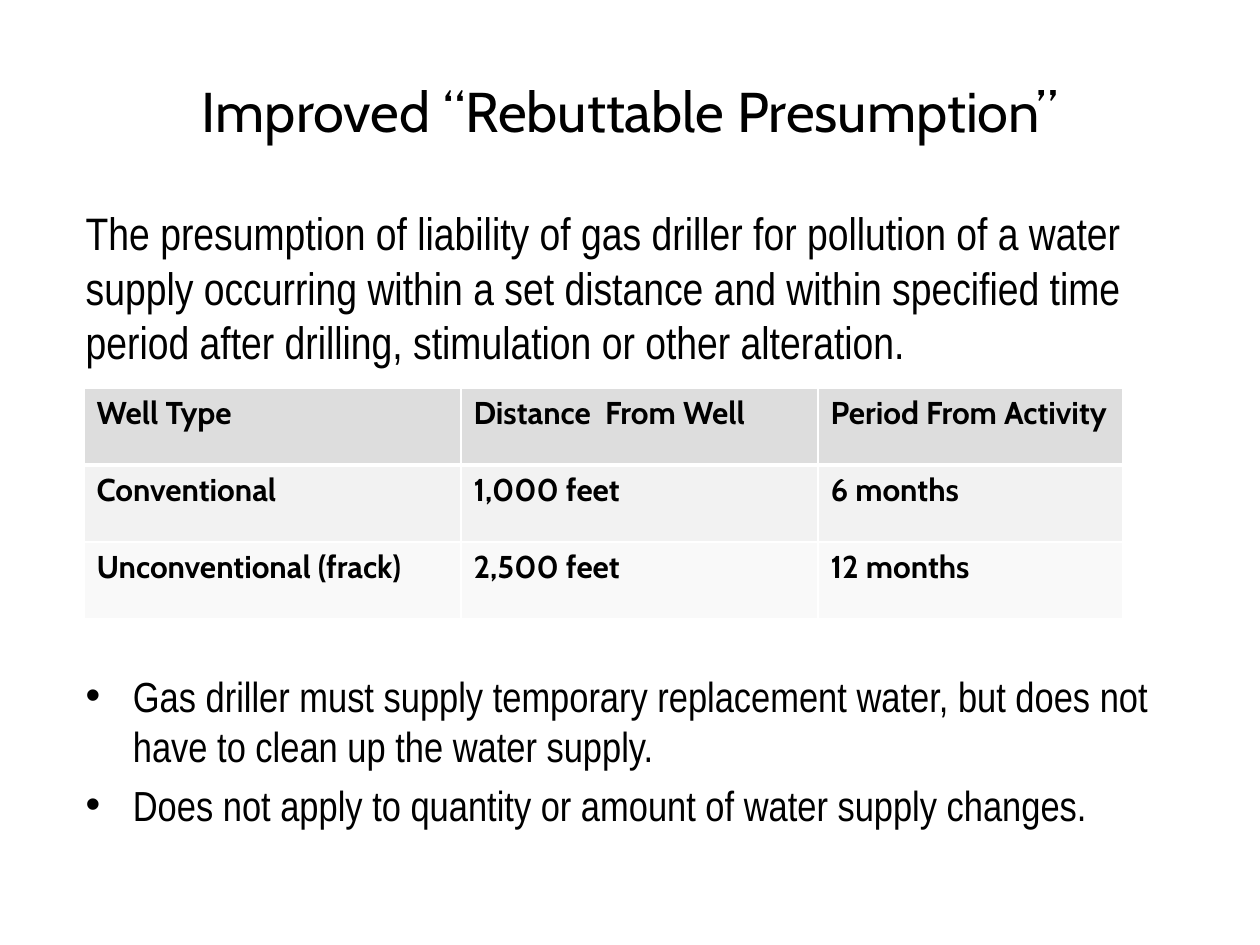
from lxml.etree import SubElement
from pptx import Presentation
from pptx.dml.color import RGBColor
from pptx.enum.text import MSO_ANCHOR, MSO_AUTO_SIZE, PP_ALIGN
from pptx.oxml.ns import qn
from pptx.util import Emu, Pt

SCALE = 914400 // 126
COLORS = {"text": "000000", "line": "FFFFFF", "head": "DDDDDD",
          "odd": "F2F2F2", "even": "F9F9F9"}
HEAD, BODY = "Cabin", "Arial Narrow"


def px(n):
    """Turn pixels into EMU."""
    return Emu(n * SCALE)


def color(name):
    """Look up a colour by name."""
    return RGBColor.from_string(COLORS[name])


class Deck:
    """Hold the style and the current slide."""

    def __init__(self, wide, high):
        """Start a deck with one slide."""
        self.deck = Presentation()
        self.deck.slide_width, self.deck.slide_height = px(wide), px(high)
        self.slide = self.deck.slides.add_slide(self.deck.slide_layouts[1])

    def style(self, para, face, size, bold=False):
        """Set the font of a paragraph."""
        font = para.font
        font.name, font.size, font.bold = face, Pt(size), bold
        font.color.rgb = color("text")

    def place(self, shape, box):
        """Move a placeholder and return its text frame."""
        shape.left, shape.top, shape.width, shape.height = map(px, box)
        frame = shape.text_frame
        frame.word_wrap = True
        frame.auto_size = MSO_AUTO_SIZE.NONE
        return frame

    def title(self, text, box):
        """Fill the title."""
        frame = self.place(self.slide.shapes.title, box)
        frame.vertical_anchor = MSO_ANCHOR.MIDDLE
        para = frame.paragraphs[0]
        para.text, para.alignment = text, PP_ALIGN.CENTER
        self.style(para, HEAD, 32)

    def body(self, intro, points, gap, box):
        """Fill the body with an introduction and a list below a gap."""
        frame = self.place(self.slide.placeholders[1], box)
        para = frame.paragraphs[0]
        para.text = intro
        self.style(para, BODY, 26)
        props = para._p.get_or_add_pPr()
        props.set("marL", "0")
        props.set("indent", "0")
        props.insert_element_before(
            props.makeelement(qn("a:buNone"), {}), "a:tabLst", "a:defRPr", "a:extLst")
        for i, text in enumerate(points):
            para = frame.add_paragraph()
            para.text = text
            self.style(para, BODY, 24)
            if i == 0:
                para.space_before = Pt(gap)

    def edge(self, cell, side, width):
        """Draw one border of a cell."""
        line = SubElement(cell._tc.get_or_add_tcPr(), qn("a:" + side), w=str(Pt(width)))
        fill = SubElement(line, qn("a:solidFill"))
        SubElement(fill, qn("a:srgbClr"), val=COLORS["line"])

    def table(self, rows, cols, high, fills, box):
        """Add a table with white rules."""
        left, top = box
        grid = self.slide.shapes.add_table(
            len(rows), len(cols), px(left), px(top),
            px(sum(cols)), px(high * len(rows))).table
        for col, wide in zip(grid.columns, cols):
            col.width = px(wide)
        for r, row in enumerate(rows):
            for c, text in enumerate(row):
                cell = grid.cell(r, c)
                cell.text = text
                self.style(cell.text_frame.paragraphs[0], HEAD, 18, True)
                for side in ("lnL", "lnR", "lnT", "lnB"):
                    thick = (r, side) in ((0, "lnB"), (1, "lnT"))
                    self.edge(cell, side, 3 if thick else 1)
                cell.fill.solid()
                cell.fill.fore_color.rgb = color(fills[r])


deck = Deck(1260, 945)
deck.title("Improved “Rebuttable Presumption”", (63, 32, 1134, 157))
deck.body(
    "The presumption of liability of gas driller for pollution of a water supply "
    "occurring within a set distance and within specified time period after "
    "drilling, stimulation or other alteration.",
    ["Gas driller must supply temporary replacement water, but does not have to "
     "clean up the water supply.",
     "Does not apply to quantity or amount of water supply changes."],
    172, (73, 199, 1134, 630))
deck.table(
    [("Well Type", "Distance  From Well", "Period From Activity"),
     ("Conventional", "1,000 feet", "6 months"),
     ("Unconventional (frack)", "2,500 feet", "12 months")],
    (377, 357, 305), 77, ("head", "odd", "even"), (84, 388))
deck.deck.save("out.pptx")
